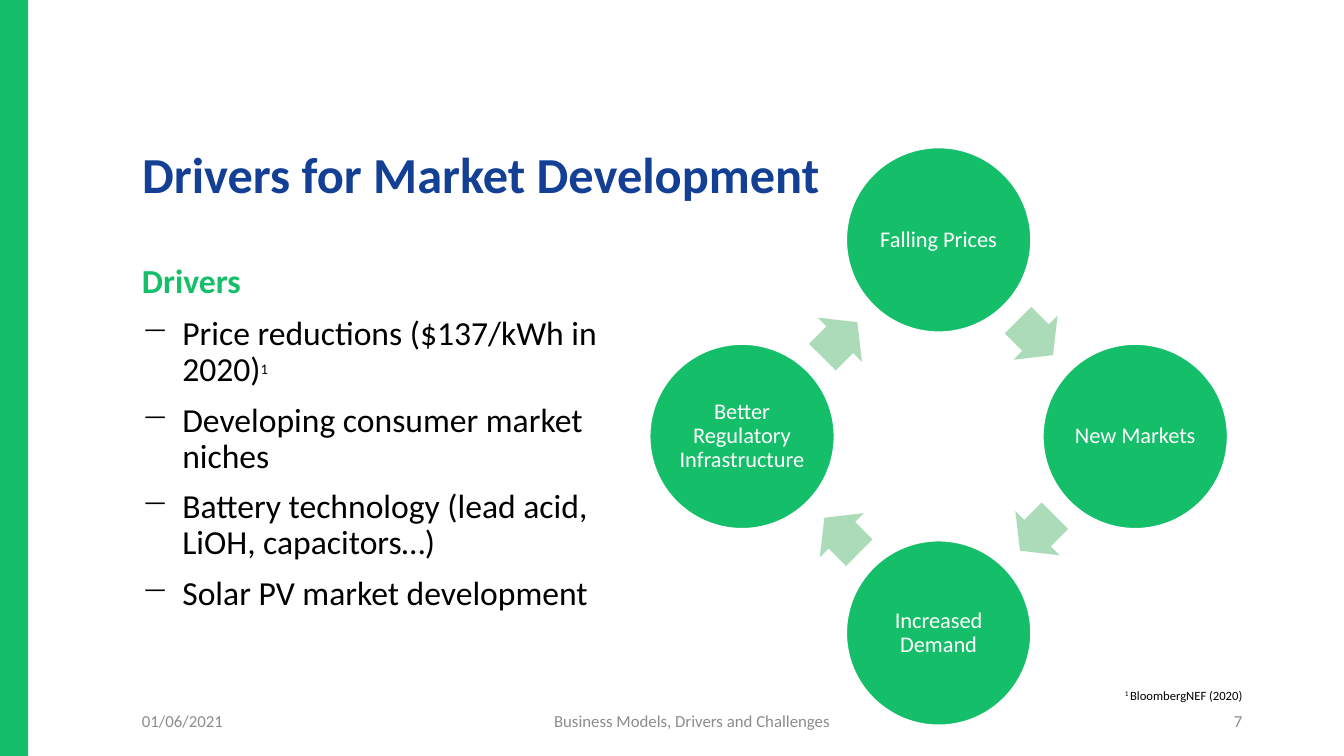
from lxml import etree
from pptx import Presentation, util as u
from pptx.dml.color import RGBColor
from pptx.enum import shapes, text
from pptx.oxml.ns import qn

GREEN, PALE, NAVY = "15BE69", "ACDBB9", "134094"
WHITE, BLACK, GREY = "FFFFFF", "000000", "8C8C8C"
LEFT, CENTER, RIGHT = text.PP_ALIGN.LEFT, text.PP_ALIGN.CENTER, text.PP_ALIGN.RIGHT
MIDDLE = text.MSO_ANCHOR.MIDDLE

deck = Presentation()
deck.slide_width, deck.slide_height = u.Inches(13.33), u.Inches(7.5)
slide = deck.slides.add_slide(deck.slide_layouts[5])


def style(para, size, color, align=LEFT, bold=False):
    para.alignment = align
    font = para.font
    font.name, font.size, font.bold = "Calibri", u.Pt(size), bold
    font.color.rgb = RGBColor.from_string(color)


def add(kind, box, fill=None):
    """Add a preset shape, or a wrapping text box when kind is None."""
    box = [u.Inches(n) for n in box]
    if kind is None:
        item = slide.shapes.add_textbox(*box)
        item.text_frame.word_wrap = True
        return item
    item = slide.shapes.add_shape(kind, *box)
    item.shadow.inherit = False
    item.fill.solid()
    item.fill.fore_color.rgb = RGBColor.from_string(fill)
    item.line.fill.background()
    return item


# Side band and footer
add(shapes.MSO_SHAPE.RECTANGLE, (0, 0, 0.28, 7.5), GREEN)
for words, left, width, align in (
    ("01/06/2021", 1.31, 1.42, LEFT),
    ("Business Models, Drivers and Challenges", 2.93, 7.87, CENTER),
    ("7", 11, 1.42, RIGHT),
):
    frame = add(None, (left, 6.95, width, 0.4)).text_frame
    frame.text, frame.vertical_anchor = words, MIDDLE
    style(frame.paragraphs[0], 12, GREY, align)

# Title and heading
title = slide.shapes.title
title.left, title.top = u.Inches(1.31), u.Inches(0.68)
title.width, title.height = u.Inches(8.11), u.Inches(1.34)
frame = title.text_frame
frame.text = "Drivers for Market Development"
frame.auto_size = text.MSO_AUTO_SIZE.NONE
frame.vertical_anchor = text.MSO_ANCHOR.BOTTOM
frame.margin_bottom = 0
frame.paragraphs[0].line_spacing = 0.85
style(frame.paragraphs[0], 36, NAVY, bold=True)

frame = add(None, (1.31, 2.57, 5.35, 0.51)).text_frame
frame.text = "Drivers"
frame.paragraphs[0].line_spacing = 0.9
style(frame.paragraphs[0], 24, GREEN, bold=True)

# Bullets
frame = add(None, (1.31, 3.09, 5.35, 3.67)).text_frame
frame.text = "\n".join((
    "Price reductions ($137/kWh in 2020)",
    "Developing consumer market niches",
    "Battery technology (lead acid, LiOH, capacitors…)",
    "Solar PV market development",
))
for row, para in enumerate(frame.paragraphs):
    props = para._p.get_or_add_pPr()
    props.set("marL", str(u.Inches(0.4)))
    props.set("indent", str(-u.Inches(0.4)))
    etree.SubElement(props, qn("a:buChar")).set("char", "−")
    para.line_spacing = 0.9
    if row:
        para.space_before = u.Pt(10)
    style(para, 24, BLACK)
mark = frame.paragraphs[0].add_run()
mark.text, mark.font.size = "1", u.Pt(18)

# Footnote
frame = add(None, (9.42, 6.77, 3, 0.25)).text_frame
note = frame.paragraphs[0]
style(note, 9, BLACK, RIGHT)
for words in ("1 ", "BloombergNEF (2020)"):
    note.add_run().text = words
for run in (mark, note.runs[0]):
    run._r.get_or_add_rPr().set("baseline", "30000")

# Cycle: each step turns both offsets a quarter clockwise about the middle
mid_x, mid_y, size = 9.31, 4.33, 1.83
wide, high = 0.49, 0.62
disc_x, disc_y = 0, -1.95
tip_x, tip_y = 0.96, -0.98
for step, words in enumerate((
    "Falling Prices", "New Markets", "Increased Demand",
    "Better Regulatory Infrastructure",
)):
    disc = add(shapes.MSO_SHAPE.OVAL, (
        mid_x + disc_x - size / 2, mid_y + disc_y - size / 2, size, size), GREEN)
    disc.line.color.rgb = RGBColor.from_string(WHITE)
    disc.line.width = u.Pt(1)
    frame = disc.text_frame
    frame.text, frame.word_wrap, frame.vertical_anchor = words, True, MIDDLE
    frame.margin_left = frame.margin_right = u.Inches(0.02)
    frame.margin_top = frame.margin_bottom = u.Inches(0.02)
    frame.paragraphs[0].line_spacing = 0.9
    style(frame.paragraphs[0], 16, WHITE, CENTER)

    arrow = add(shapes.MSO_SHAPE.RIGHT_ARROW, (
        mid_x + tip_x - wide / 2, mid_y + tip_y - high / 2, wide, high), PALE)
    arrow.adjustments[0], arrow.adjustments[1] = 0.6, 0.5
    arrow.rotation = 45 + 90 * step
    disc_x, disc_y = -disc_y, disc_x
    tip_x, tip_y = -tip_y, tip_x

deck.save("out.pptx")
